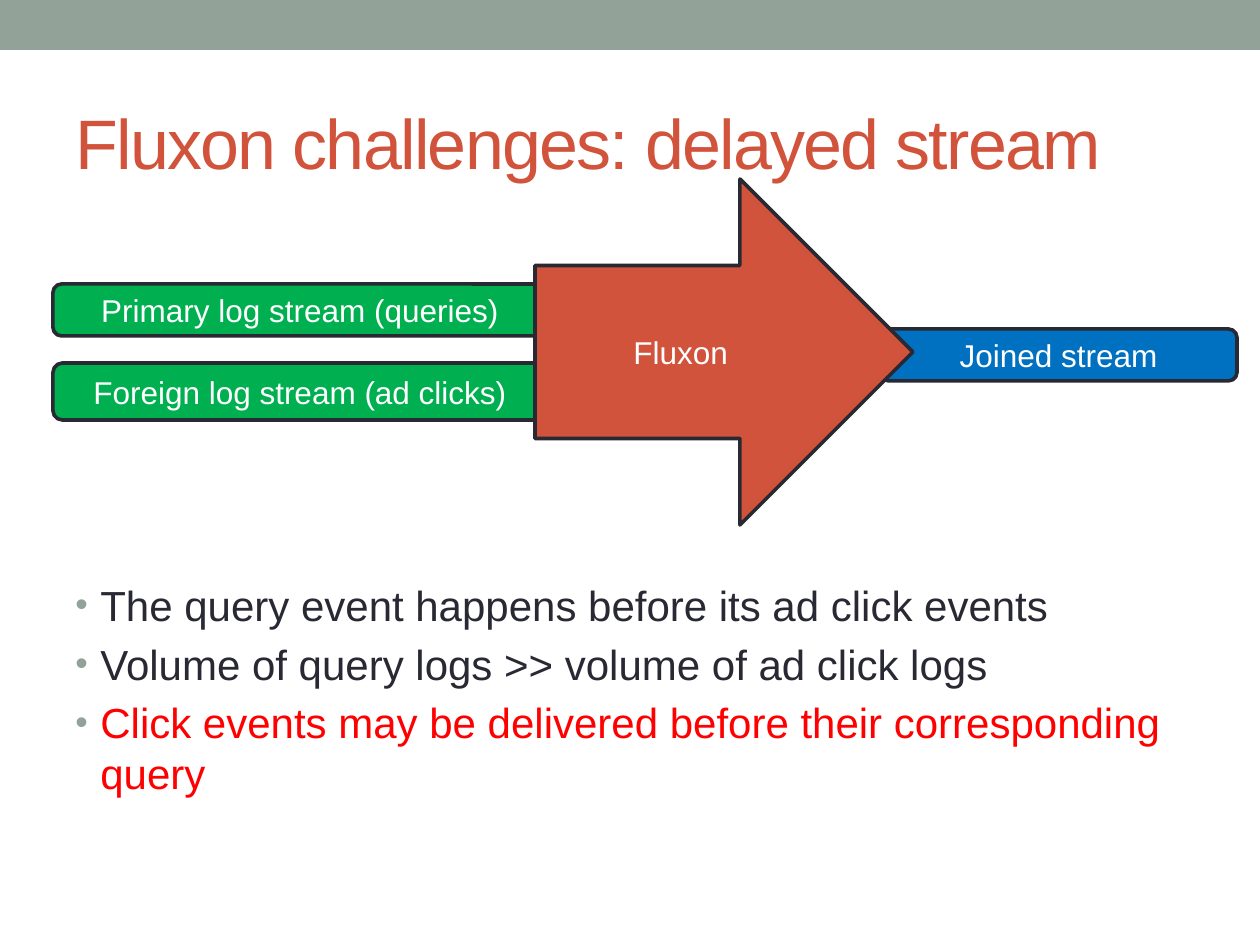
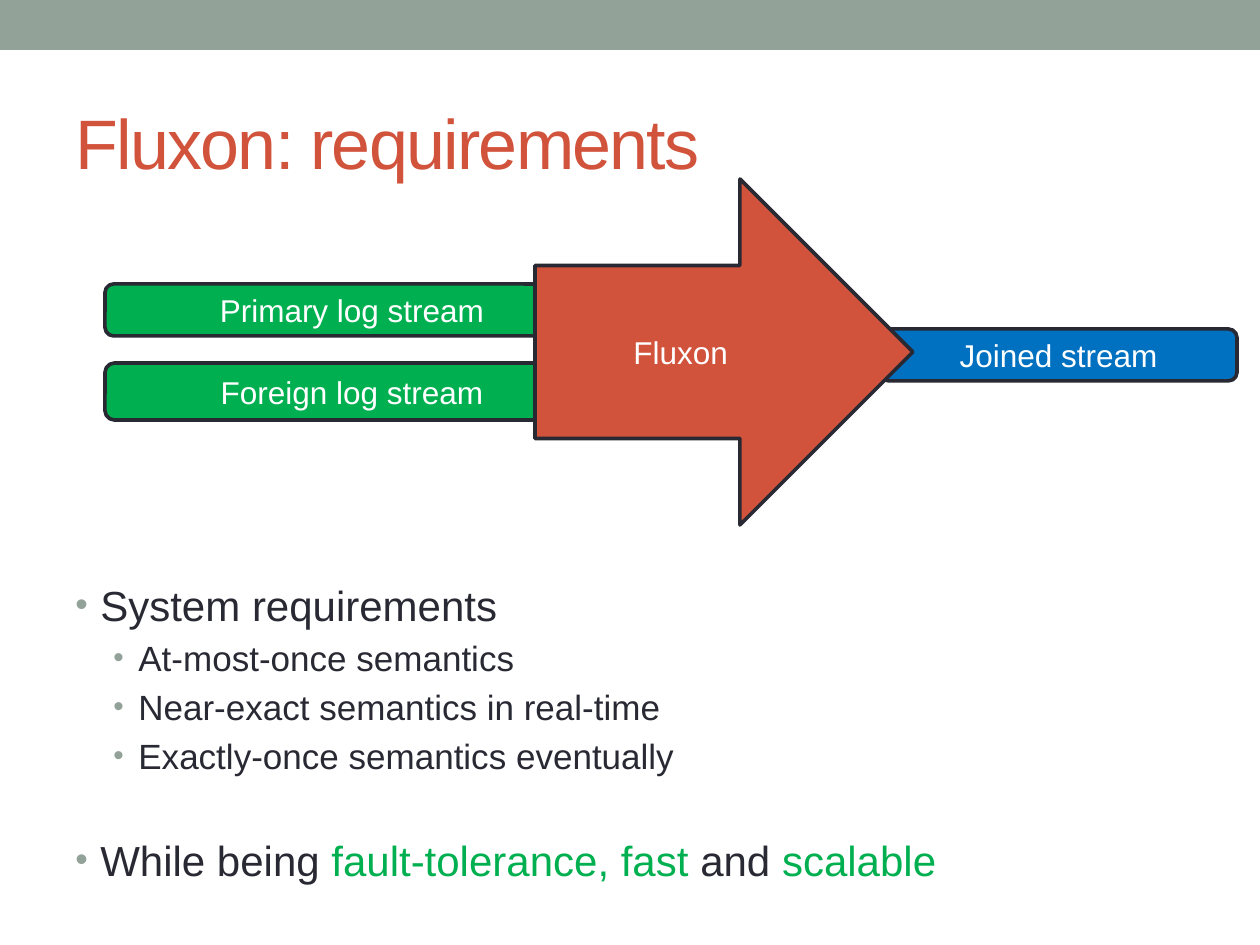
from dataclasses import dataclass

from lxml import etree
from pptx import Presentation, util as u
from pptx.dml.color import RGBColor
from pptx.enum import shapes, text
from pptx.oxml import ns

PX_PER_INCH = 126
SYSTEM = "Fluxon"
SHAPE, ALIGN, ANCHOR = shapes.MSO_SHAPE, text.PP_ALIGN, text.MSO_ANCHOR


@dataclass(frozen=True)
class Theme:
    font: str = "Arial"
    band: str = "93A299"
    accent: str = "D2533C"
    ink: str = "292934"
    white: str = "FFFFFF"
    green: str = "00B050"
    blue: str = "0070C0"
    red: str = "FF0000"
    title_size: int = 40
    body_sizes: tuple = (24, 20)
    label_size: int = 18
    outline: float = 2.08
    space_before: float = 0.2  # share of the type size


THEME = Theme()


def px(length):
    return u.Emu(round(length * u.Inches(1) / PX_PER_INCH))


def assign(target, **values):
    for name, value in values.items():
        setattr(target, name, value)


def place(box, left, top, width, height):
    assign(box, left=px(left), top=px(top), width=px(width), height=px(height))


def add_span(para, words, size, color):
    span = para.add_run()
    span.text = words
    assign(span.font, name=THEME.font, size=u.Pt(size), bold=False)
    span.font.color.rgb = RGBColor.from_string(color)
    return span


def add_block(page, kind, bounds, fill, label=None):
    """Add a filled shape; a labelled one also gets the dark outline."""
    block = page.shapes.add_shape(kind, *map(px, bounds))
    block.shadow.inherit = False
    block.fill.solid()
    block.fill.fore_color.rgb = RGBColor.from_string(fill)
    if label is None:
        block.line.fill.background()
        return
    block.line.color.rgb = RGBColor.from_string(THEME.ink)
    block.line.width = u.Pt(THEME.outline)
    assign(block.text_frame, vertical_anchor=ANCHOR.MIDDLE, word_wrap=True)
    para = block.text_frame.paragraphs[0]
    para.alignment = ALIGN.CENTER
    add_span(para, label, THEME.label_size, THEME.white)


def set_title(page, words):
    title = page.shapes.title
    place(title, 63, 73, 1134, 136)
    assign(title.text_frame, vertical_anchor=ANCHOR.MIDDLE, word_wrap=True,
           auto_size=text.MSO_AUTO_SIZE.NONE)
    para = title.text_frame.paragraphs[0]
    para.alignment = ALIGN.LEFT
    span = add_span(para, words, THEME.title_size, THEME.accent)
    span.font._element.set("spc", "-100")


def set_bullet(para, indent, hanging=25):
    props = para._p.get_or_add_pPr()
    props.set("marL", str(px(indent)))
    props.set("indent", str(-px(hanging)))
    color = etree.SubElement(props, ns.qn("a:buClr"))
    etree.SubElement(color, ns.qn("a:srgbClr"), val=THEME.band)
    etree.SubElement(props, ns.qn("a:buSzPct"), val="85000")
    etree.SubElement(props, ns.qn("a:buFont"), typeface=THEME.font)
    etree.SubElement(props, ns.qn("a:buChar"), char="•")


def add_bullets(page, items):
    """Each item is (level, spans, space before in points or None)."""
    box = page.shapes.add_textbox(*map(px, (63, 573, 1134, 319)))
    frame = box.text_frame
    frame.word_wrap = True
    for number, (level, spans, space) in enumerate(items):
        para = frame.add_paragraph() if number else frame.paragraphs[0]
        size = THEME.body_sizes[level]
        if number:
            para.space_before = u.Pt(space or size * THEME.space_before)
        para.level = level
        set_bullet(para, (25, 63)[level])
        for words, color in spans:
            add_span(para, words, size, color)


def add_join_diagram(page, left, primary, foreign):
    bar = SHAPE.ROUNDED_RECTANGLE
    add_block(page, bar, (880, 329, 357, 52), THEME.blue, "Joined stream")
    add_block(page, bar, (left, 284, 494, 52), THEME.green, primary)
    add_block(page, bar, (left, 363, 494, 57), THEME.green, foreign)
    add_block(page, SHAPE.RIGHT_ARROW, (535, 179, 378, 346), THEME.accent, SYSTEM)


def add_page(deck, title, streams, items):
    page = deck.slides.add_slide(deck.slide_layouts[5])
    add_block(page, SHAPE.RECTANGLE, (0, 0, 1260, 50), THEME.band)
    set_title(page, title)
    add_bullets(page, items)
    add_join_diagram(page, *streams)


def bullet(words, level=0, color=THEME.ink):
    return level, [(words, color)], None


def main():
    deck = Presentation()
    assign(deck, slide_width=px(1260), slide_height=px(945))
    add_page(
        deck, f"{SYSTEM} challenges: delayed stream",
        (53, "Primary log stream (queries)", "Foreign log stream (ad clicks)"),
        [bullet("The query event happens before its ad click events"),
         bullet("Volume of query logs >> volume of ad click logs"),
         bullet("Click events may be delivered before their corresponding query",
                color=THEME.red)])
    goals = [("While being ", THEME.ink), ("fault-tolerance, fast", THEME.green),
             (" and ", THEME.ink), ("scalable", THEME.green)]
    add_page(
        deck, f"{SYSTEM}: requirements",
        (105, "Primary log stream", "Foreign log stream"),
        [bullet("System requirements"),
         bullet("At-most-once semantics", 1),
         bullet("Near-exact semantics in real-time", 1),
         bullet("Exactly-once semantics eventually", 1),
         (0, goals, 33)])
    deck.save("out.pptx")


if __name__ == "__main__":
    main()
